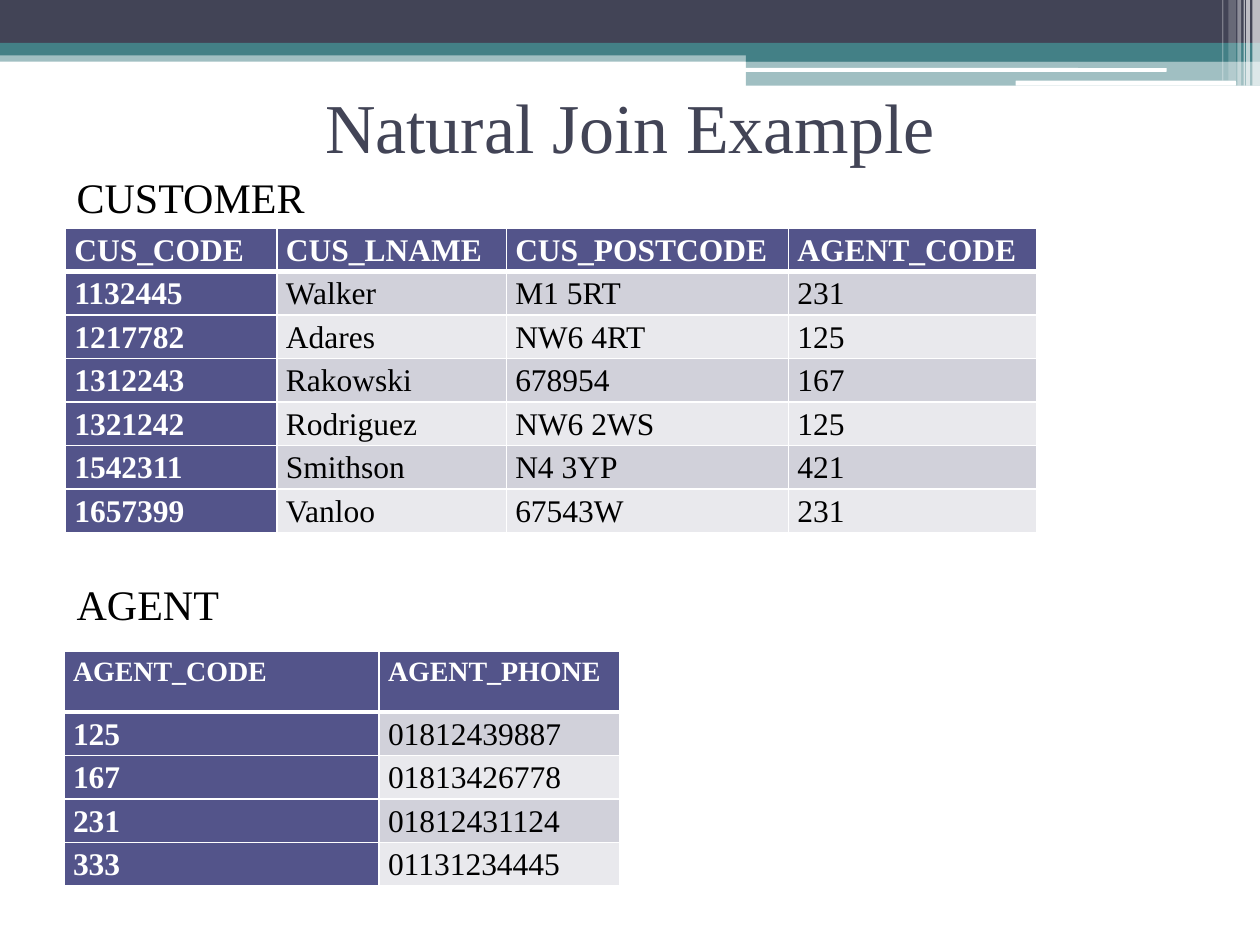
from lxml import etree
from pptx import Presentation
from pptx import util as u
from pptx.dml import color
from pptx.enum import shapes, text
from pptx.oxml import ns


def tint(part, code, share=100):
    part.solid()
    part.fore_color.rgb = color.RGBColor.from_string(code)
    if share < 100:
        tone = part.fore_color._xFill[0]
        etree.SubElement(tone, ns.qn("a:alpha"), val=str(share * 1000))


def write(frame, words, size, code, bold=False):
    frame.text = words
    for run in frame.paragraphs[0].runs:
        run.font.name = "Times New Roman"
        run.font.size = u.Pt(size)
        run.font.bold = bold
        tint(run.font.fill, code)


deck = Presentation()
deck.slide_width, deck.slide_height = u.Inches(10), u.Inches(7.5)
col, row = deck.slide_width / 100, deck.slide_height / 75
slide = deck.slides.add_slide(deck.slide_layouts[5])

WHITE, BLACK, SLATE, TEAL, PLUM = "FFFFFF", "000000", "424456", "438086", "53548A"
BANDS = ["D1D1DA", "E9E9ED"]
RECT = shapes.MSO_SHAPE.RECTANGLE
ROUND = shapes.MSO_SHAPE.ROUNDED_RECTANGLE

bars = [
    (RECT, 0, 4, 100, 0.9, TEAL, 50),
    (RECT, 0, 0, 100, 3.4, SLATE, 100),
    (RECT, 0, 3.4, 100, 1, TEAL, 100),
    (RECT, 59.2, 3.9, 40.8, 1, TEAL, 100),
    (RECT, 59.2, 4.8, 40.8, 2, TEAL, 50),
    (ROUND, 59.1, 5.4, 33.5, 0.3, WHITE, 100),
    (ROUND, 80.6, 6.4, 17.5, 0.4, WHITE, 100),
]
stripes = [
    (99.4, 0.6, 6.8, 65),
    (98.9, 0.3, 6.8, 65),
    (98.7, 0.1, 6.8, 60),
    (98.2, 0.3, 6.8, 40),
    (97.5, 0.6, 6.4, 20),
    (97, 0.1, 6.4, 30),
]
bars += [(RECT, x, 0, wide, high, WHITE, share) for x, wide, high, share in stripes]
for kind, x, y, wide, high, code, share in bars:
    bar = slide.shapes.add_shape(
        kind, int(x * col), int(y * row), int(wide * col), int(high * row))
    bar.shadow.inherit = False
    bar.line.fill.background()
    tint(bar.fill, code, share)

title = slide.shapes.title
title.element.getparent().append(title.element)
title.left, title.top = int(5 * col), int(6 * row)
title.width, title.height = int(90 * col), int(7.9 * row)
write(title.text_frame, "Natural Join Example", 40, SLATE)
title.text_frame.vertical_anchor = text.MSO_ANCHOR.MIDDLE
title.text_frame.paragraphs[0].alignment = text.PP_ALIGN.CENTER

for name, y, wide in [("CUSTOMER", 13.1, 29.1), ("AGENT", 45.4, 26.8)]:
    label = slide.shapes.add_textbox(
        int(5.1 * col), int(y * row), int(wide * col), int(5 * row))
    label.text_frame.word_wrap = True
    label.text_frame.auto_size = text.MSO_AUTO_SIZE.SHAPE_TO_FIT_TEXT
    write(label.text_frame, name, 24, BLACK)

buyers = [
    ["CUS_CODE", "CUS_LNAME", "CUS_POSTCODE", "AGENT_CODE"],
    ["1132445", "Walker", "M1 5RT", "231"],
    ["1217782", "Adares", "NW6 4RT", "125"],
    ["1312243", "Rakowski", "678954", "167"],
    ["1321242", "Rodriguez", "NW6 2WS", "125"],
    ["1542311", "Smithson", "N4 3YP", "421"],
    ["1657399", "Vanloo", "67543W", "231"],
]
agents = [
    ["AGENT_CODE", "AGENT_PHONE"],
    ["125", "01812439887"],
    ["167", "01813426778"],
    ["231", "01812431124"],
    ["333", "01131234445"],
]
grids = [
    (buyers, 5.2, 18.1, [16.8, 18.2, 22.4, 19.7], 3, 3, 18),
    (agents, 5.1, 51.7, [25, 19.1], 4.8, 2.3, 16),
]
for data, x, y, wides, top, high, size in grids:
    deep = top + high * (len(data) - 1)
    table = slide.shapes.add_table(
        len(data), len(wides), int(x * col), int(y * row),
        int(sum(wides) * col), int(deep * row)).table
    table.first_col = True
    for c, wide in enumerate(wides):
        table.columns[c].width = int(wide * col)
    for r, line in enumerate(data):
        table.rows[r].height = int((high if r else top) * row)
        for c, words in enumerate(line):
            cell = table.cell(r, c)
            head = r == 0 or c == 0
            cell.margin_left = cell.margin_right = int(0.7 * col)
            cell.margin_top = cell.margin_bottom = 0
            write(cell.text_frame, words, 18 if r else size,
                  WHITE if head else BLACK, head)
            cell.text_frame.paragraphs[0].line_spacing = 1.15
            props = cell._tc.get_or_add_tcPr()
            for side in "LRTB":
                thick = 3 if (r, side) in [(0, "B"), (1, "T")] else 1
                edge = etree.SubElement(
                    props, ns.qn("a:ln" + side), w=str(u.Pt(thick)))
                paint = etree.SubElement(edge, ns.qn("a:solidFill"))
                etree.SubElement(paint, ns.qn("a:srgbClr"), val=WHITE)
            tint(cell.fill, PLUM if head else BANDS[(r - 1) % 2])

deck.save("out.pptx")
